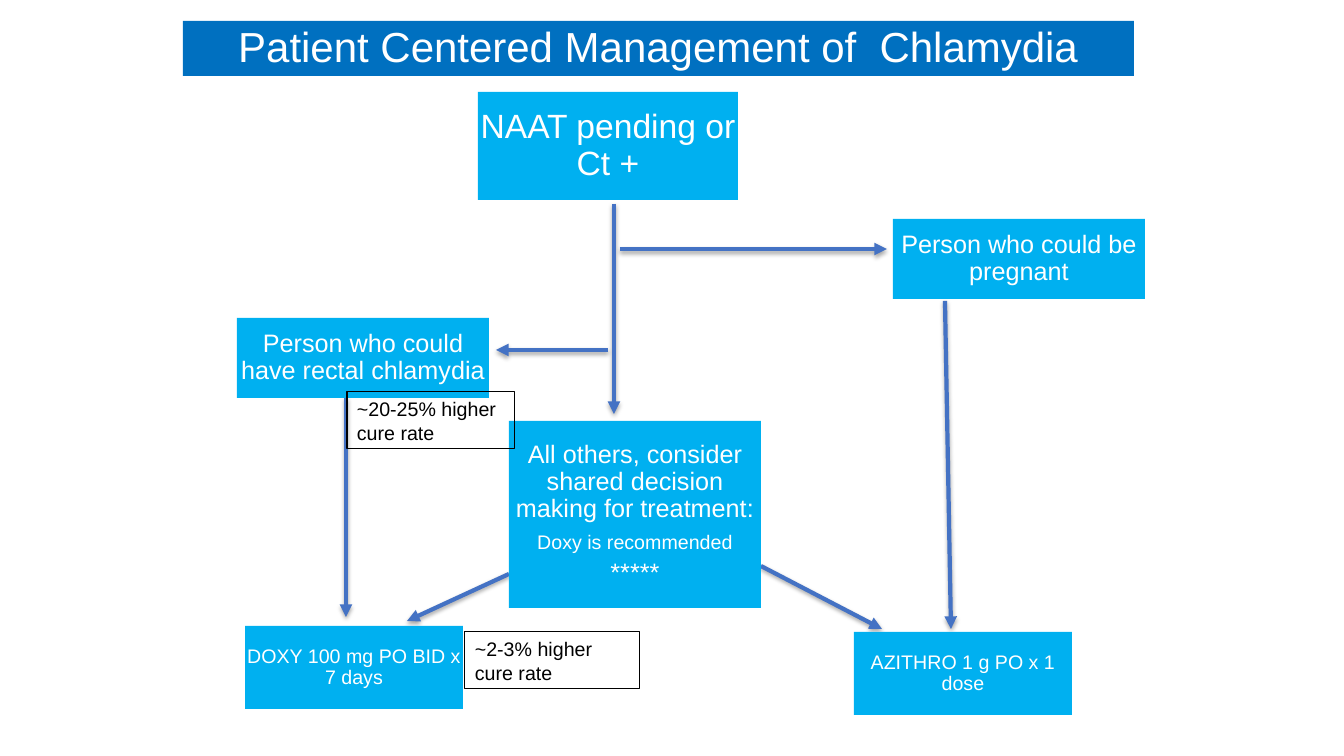
"""Build the chlamydia management flowchart slide."""
from lxml import etree
from pptx import Presentation
from pptx import util as u
from pptx.dml.color import RGBColor
from pptx.enum import shapes, text
from pptx.oxml import parse_xml
from pptx.oxml.ns import nsdecls, qn

PX = 914400 / 100.8
TITLE_BLUE = RGBColor(0x00, 0x70, 0xC0)
BOX_BLUE = RGBColor(0x00, 0xB0, 0xF0)
ARROW_BLUE = RGBColor(0x44, 0x72, 0xC4)
WHITE = RGBColor(0xFF, 0xFF, 0xFF)
BLACK = RGBColor(0x00, 0x00, 0x00)
SHADOW = (
    f'<a:effectLst {nsdecls("a")}><a:outerShdw blurRad="40000" dist="23000" dir="5400000" rotWithShape="0">'
    '<a:srgbClr val="000000"><a:alpha val="35000"/></a:srgbClr></a:outerShdw></a:effectLst>'
)


def px(*values):
    """Turn pixel lengths into EMU."""
    return [u.Emu(round(v * PX)) for v in values]


def fill_box(sp, color, inset, lines):
    """Fill a box and centre its (text, size) lines."""
    sp.fill.solid()
    sp.fill.fore_color.rgb = color
    sp.line.fill.background()
    tf = sp.text_frame
    tf.word_wrap = True
    tf.auto_size = text.MSO_AUTO_SIZE.NONE
    tf.vertical_anchor = text.MSO_ANCHOR.MIDDLE
    tf.margin_left = tf.margin_top = tf.margin_right = tf.margin_bottom = px(inset)[0]
    tf.text = "\n".join(line for line, size in lines)
    for p, (line, size) in zip(tf.paragraphs, lines):
        p.alignment = text.PP_ALIGN.CENTER
        p.line_spacing = 0.9
        p.space_before = u.Pt(0)
        p.space_after = u.Pt(round(size * 0.35, 1))
        p.font.name = "Arial"
        p.font.size = u.Pt(size)
        p.font.color.rgb = WHITE


prs = Presentation()
prs.slide_width, prs.slide_height = px(1344, 756)
s = prs.slides.add_slide(prs.slide_layouts[5])

title = s.shapes.title
title.left, title.top, title.width, title.height = px(183, 21, 951, 55)
fill_box(title, TITLE_BLUE, 2, [("Patient Centered Management of  Chlamydia", 30)])

arrows = [
    (346, 398, 346, 617),
    (945, 301, 951, 629),
    (620, 249, 887, 249),
    (614, 204, 614, 414),
    (761, 566, 882, 629),
    (608, 350, 496, 350),
    (509, 574, 407, 621),
]
for ends in arrows:
    arrow = s.shapes.add_connector(shapes.MSO_CONNECTOR.STRAIGHT, *px(*ends))
    arrow.line.color.rgb = ARROW_BLUE
    arrow.line.width = u.Pt(3)
    etree.SubElement(arrow.line._get_or_add_ln(), qn("a:tailEnd"), type="triangle")
    arrow._element.spPr.append(parse_xml(SHADOW))

boxes = [
    ((893, 219, 252, 80), 1, [("Person who could be pregnant", 18)]),
    ((478, 92, 260, 108), 2, [("NAAT pending or Ct +", 24)]),
    ((245, 626, 218, 83), 1, [("DOXY 100 mg PO BID x 7 days", 14)]),
    ((854, 632, 218, 83), 1, [("AZITHRO 1 g PO x 1 dose", 14)]),
    ((237, 318, 252, 80), 1, [("Person who could have rectal chlamydia", 18)]),
    ((509, 421, 252, 187), 1, [
        ("All others, consider shared decision making for treatment:", 18),
        ("Doxy is recommended", 14),
        ("*****", 18),
    ]),
]
for place, inset, lines in boxes:
    sp = s.shapes.add_shape(shapes.MSO_SHAPE.RECTANGLE, *px(*place))
    sp.shadow.inherit = False
    fill_box(sp, BOX_BLUE, inset, lines)

notes = [
    ((465, 632, 175, 57), "~2-3% higher cure rate"),
    ((347, 392, 168, 57), "~20-25% higher cure rate"),
]
for place, words in notes:
    note = s.shapes.add_textbox(*px(*place))
    note.line.color.rgb = BLACK
    note.line.width = u.Pt(0.75)
    tf = note.text_frame
    tf.word_wrap = True
    tf.auto_size = text.MSO_AUTO_SIZE.SHAPE_TO_FIT_TEXT
    tf.text = words
    r = tf.paragraphs[0].runs[0]
    r.font.name = "Arial"
    r.font.size = u.Pt(14)
    r.font.color.rgb = BLACK

prs.save("out.pptx")
